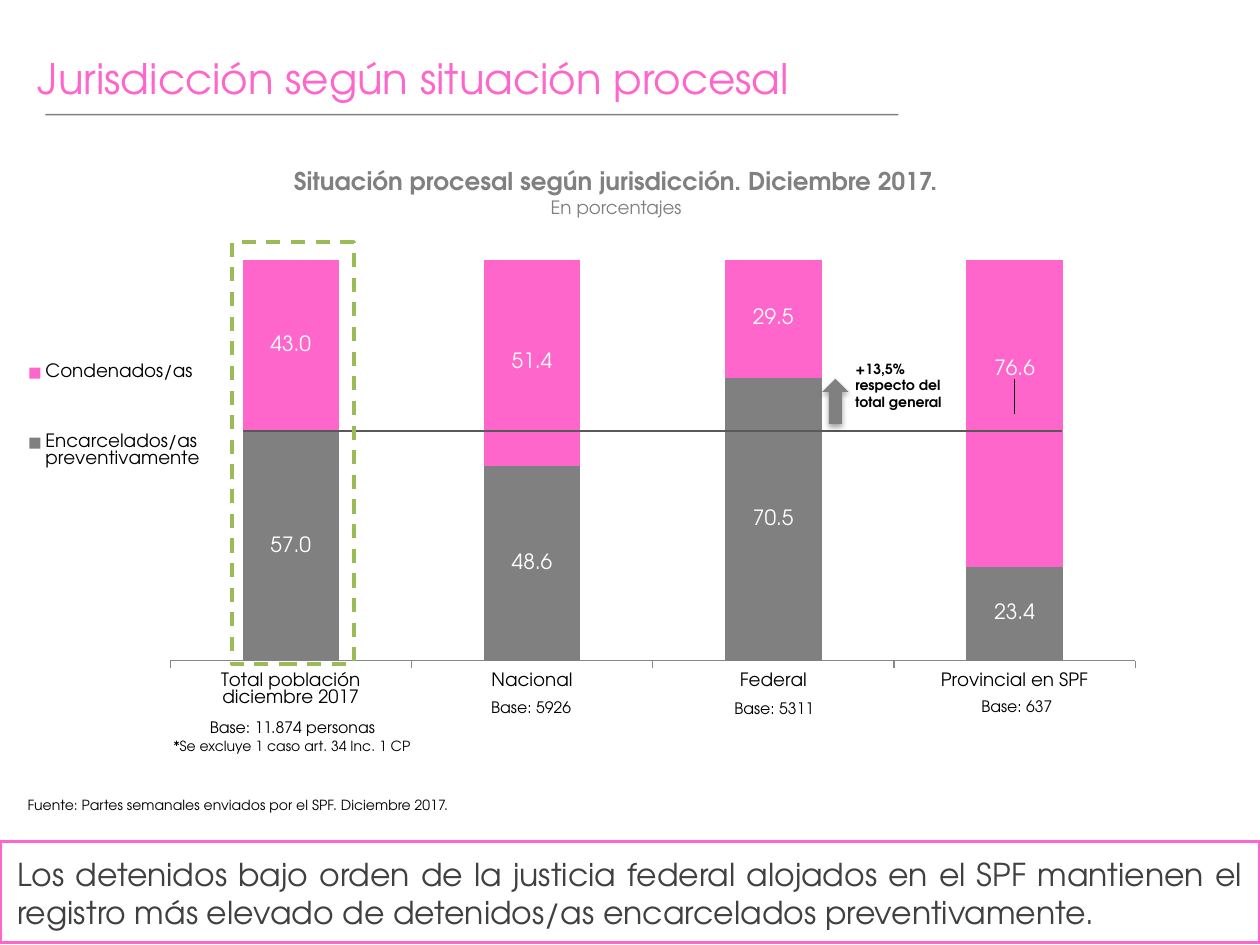
from lxml import etree
from pptx import Presentation
from pptx.chart.data import CategoryChartData
from pptx.dml.color import RGBColor
from pptx.enum.chart import XL_CHART_TYPE, XL_LEGEND_POSITION, XL_TICK_MARK
from pptx.enum.dml import MSO_LINE
from pptx.enum.shapes import MSO_CONNECTOR, MSO_SHAPE
from pptx.enum.text import MSO_ANCHOR, MSO_AUTO_SIZE, PP_ALIGN
from pptx.oxml import parse_xml
from pptx.oxml.ns import nsdecls, qn
from pptx.util import Inches, Pt

FONT = "TeX Gyre Adventor"
COLORS = {"pink": "FF66CC", "gray": "808080", "dark": "404040", "black": "000000",
          "white": "FFFFFF", "green": "9BBB59", "rule": "595959", "axis": "888888"}


def color(name):
    return RGBColor.from_string(COLORS[name])


def inches(box):
    return [Inches(length) for length in box]


def set_font(font, size, name="black", bold=False):
    font.name, font.size, font.bold = FONT, Pt(size), bold
    font.color.rgb = color(name)


def write(shape, *lines, size=9, fill="black", bold=False, align=PP_ALIGN.LEFT, wrap=True,
          auto_size=MSO_AUTO_SIZE.SHAPE_TO_FIT_TEXT):
    """Write each line as a paragraph; a line is text or (text, size, bold)."""
    frame = shape.text_frame
    frame.word_wrap = wrap
    frame.auto_size = auto_size
    frame.vertical_anchor = MSO_ANCHOR.TOP
    for index, line in enumerate(lines):
        text, line_size, line_bold = (line, size, bold) if isinstance(line, str) else line
        para = frame.add_paragraph() if index else frame.paragraphs[0]
        para.alignment = align
        span = para.add_run()
        span.text = text
        set_font(span.font, line_size, fill, line_bold)


def add_text(page, box, *lines, **style):
    write(page.shapes.add_textbox(*inches(box)), *lines, **style)


def add_box(page, box, kind=MSO_SHAPE.RECTANGLE, fill=None, line=None):
    shape = page.shapes.add_shape(kind, *inches(box))
    shape.shadow.inherit = False
    if fill:
        shape.fill.solid()
        shape.fill.fore_color.rgb = color(fill)
    else:
        shape.fill.background()
    if line:
        shape.line.color.rgb = color(line)
        shape.line.width = Pt(2)
    else:
        shape.line.fill.background()
    return shape


def add_rule(page, left, right, top, name, opacity=None):
    rule = page.shapes.add_connector(MSO_CONNECTOR.STRAIGHT, *inches((left, top, right, top)))
    rule.line.color.rgb = color(name)
    rule.line.width = Pt(0.75)
    properties = rule.element.spPr
    if opacity:
        tint = properties.find(".//" + qn("a:srgbClr"))
        etree.SubElement(tint, qn("a:alpha"), val=str(opacity * 1000))
    etree.SubElement(properties, qn("a:effectLst"))


def manual_layout(x, y, width=None, height=None, inner=False):
    target = '<c:layoutTarget val="inner"/>' if inner else ""
    modes = '<c:xMode val="edge"/><c:yMode val="edge"/>' if width else ""
    size = f'<c:w val="{width}"/><c:h val="{height}"/>' if width else ""
    return parse_xml(f'<c:layout {nsdecls("c")}><c:manualLayout>{target}{modes}'
                     f'<c:x val="{x}"/><c:y val="{y}"/>{size}</c:manualLayout></c:layout>')


def set_layout(parent, layout, index):
    for old in parent.findall(qn("c:layout")):
        parent.remove(old)
    parent.insert(index, layout)


def add_heading(page, box):
    left, top, width, height = box
    title = page.shapes.title
    title.left, title.top, title.width, title.height = inches(box)
    write(title, "Jurisdicción según situación procesal", size=24, fill="pink",
          auto_size=MSO_AUTO_SIZE.NONE)
    add_rule(page, left + 0.16, left + 6.93, top + 0.54, "black", opacity=50)


def add_status_chart(page, box):
    data = CategoryChartData(number_format="0.0")
    data.categories = ["Total población diciembre 2017", "Nacional", "Federal",
                       "Provincial en SPF"]
    data.add_series("Encarcelados/as preventivamente ", (57, 48.6, 70.5, 23.4))
    data.add_series("Condenados/as", (43, 51.4, 29.5, 76.6))
    chart = page.shapes.add_chart(XL_CHART_TYPE.COLUMN_STACKED_100, *inches(box), data).chart
    chart.has_title = False
    set_font(chart.font, 10.5)

    # Axes
    categories, values = chart.category_axis, chart.value_axis
    categories.major_tick_mark = XL_TICK_MARK.OUTSIDE
    categories.format.line.color.rgb = color("axis")
    categories.format.line.width = Pt(0.75)
    set_font(categories.tick_labels.font, 10.5)
    values.visible = values.has_major_gridlines = False
    values.minimum_scale, values.maximum_scale = 0, 1

    # Bars and value labels
    plot = chart.plots[0]
    plot.gap_width, plot.overlap, plot.vary_by_categories = 150, 100, False
    for series, name in zip(plot.series, ("gray", "pink")):
        series.format.fill.solid()
        series.format.fill.fore_color.rgb = color(name)
        labels = series.data_labels
        labels.show_value = True
        labels.number_format, labels.number_format_is_linked = "0.0", False
        set_font(labels.font, 12, "white")
    convicted = plot.series[1]
    set_font(convicted.points[3].data_label.font, 12, "white")
    raised_label = chart.element.find(".//" + qn("c:dLbl"))
    set_layout(raised_label, manual_layout(0, -0.09), 1)

    # Legend left of the bars
    chart.has_legend = True
    chart.legend.position = XL_LEGEND_POSITION.RIGHT
    chart.legend.include_in_layout = False
    set_font(chart.legend.font, 10.5)
    set_layout(chart.legend._element, manual_layout(0, 0.14, 0.16, 0.43), 1)
    plot_area = chart.element.find(".//" + qn("c:plotArea"))
    set_layout(plot_area, manual_layout(0.126, 0.034, 0.839, 0.82, inner=True), 0)


def add_chart_notes(page):
    # Reference level of the total and bases of each column
    add_rule(page, 1.93, 8.43, 3.42, "rule")
    for box, base in (((5.73, 5.5, 0.84, 0.25), "Base: 5311"),
                      ((7.69, 5.48, 0.77, 0.25), "Base: 637"),
                      ((3.8, 5.49, 0.84, 0.25), "Base: 5926")):
        add_text(page, box, base, wrap=False)

    # Difference from the total
    arrow = add_box(page, (6.45, 3.08, 0.36, 0.21), MSO_SHAPE.RIGHT_ARROW, fill="gray")
    arrow.rotation = 270
    effects = arrow.element.spPr.find(qn("a:effectLst"))
    effects.append(parse_xml(
        f'<a:outerShdw {nsdecls("a")} blurRad="{Pt(3.1)}" dist="{Pt(1.8)}" dir="5400000" '
        f'rotWithShape="0"><a:srgbClr val="{COLORS["black"]}"><a:alpha val="35000"/>'
        '</a:srgbClr></a:outerShdw>'))
    add_text(page, (6.69, 2.81, 0.96, 0.5), "+13,5% respecto del total general",
             size=8, bold=True)

    # Source, highlight of the total and its base
    source = add_box(page, (0.12, 6.27, 3.58, 0.24), fill="white")
    write(source, "Fuente: Partes semanales enviados por el SPF. Diciembre 2017.",
          size=8, wrap=False)
    add_box(page, (1.84, 1.92, 0.97, 3.35), line="green").line.dash_style = MSO_LINE.DASH
    add_text(page, (1.05, 5.65, 2.54, 0.39), "Base: 11.874 personas",
             ("*Se excluye 1 caso art. 34 Inc. 1 CP", 8, False), align=PP_ALIGN.CENTER)


def add_conclusion(page, box):
    left, top, width, height = box
    add_box(page, box, line="pink")
    add_text(page, (left + 0.04, top + 0.06, width - 0.08, height - 0.09),
             "Los detenidos bajo orden de la justicia federal alojados en el SPF mantienen el "
             "registro más elevado de detenidos/as encarcelados preventivamente. ",
             size=18, fill="dark", align=PP_ALIGN.JUSTIFY)


def main():
    deck = Presentation()
    deck.slide_width, deck.slide_height = Inches(10), Inches(7.5)
    page = deck.slides.add_slide(deck.slide_layouts[5])
    add_heading(page, (0.2, 0.37, 7.4, 0.62))
    add_status_chart(page, (0.2, 1.93, 9.13, 3.88))
    add_chart_notes(page)
    add_conclusion(page, (0, 6.68, 10, 0.8))
    add_text(page, (2.05, 1.27, 5.68, 0.51),
             "Situación procesal según jurisdicción. Diciembre 2017.",
             ("En porcentajes", 10.5, False),
             size=14, fill="gray", bold=True, align=PP_ALIGN.CENTER)
    deck.save("out.pptx")


if __name__ == "__main__":
    main()
